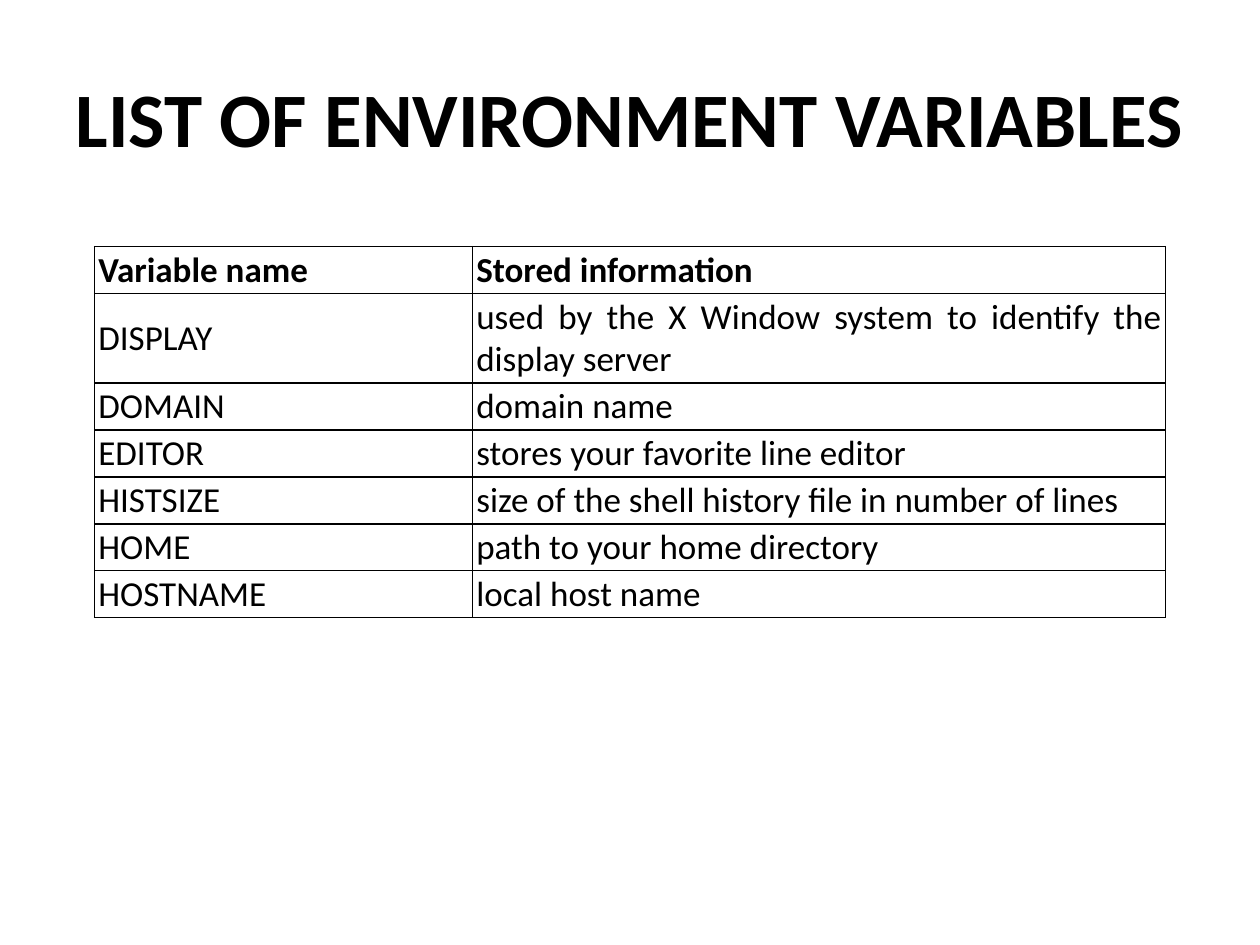
"""Build a slide that lists shell environment variables in a table."""
from lxml.etree import SubElement
from pptx import Presentation
from pptx.dml.color import RGBColor
from pptx.enum.text import MSO_ANCHOR, PP_ALIGN
from pptx.oxml.ns import qn
from pptx.util import Pt

TITLE = "LIST OF ENVIRONMENT VARIABLES"
ROWS = [
    ("Variable name", "Stored information"),
    ("DISPLAY", "used by the X Window system to identify the display server"),
    ("DOMAIN", "domain name"),
    ("EDITOR", "stores your favorite line editor"),
    ("HISTSIZE", "size of the shell history file in number of lines"),
    ("HOME", "path to your home directory"),
    ("HOSTNAME", "local host name"),
]
THEME = {"font": "Calibri", "ink": "000000", "title": 44, "body": 20, "border": 1}
TITLE_BOX = (36, 21.6, 648, 90)
TABLE_ORIGIN = (54, 141)
COLUMN_WIDTHS = (216, 396)
LINE_HEIGHT, ROW_PADDING = 24.4, 2.4
TWO_LINE_ROW = 1
CELL_FORMAT = {
    "margin_left": Pt(2.2), "margin_right": Pt(2.2),
    "margin_top": Pt(1.2), "margin_bottom": Pt(1.2),
    "vertical_anchor": MSO_ANCHOR.MIDDLE,
}
TITLE_FORMAT = {
    "margin_left": 0, "margin_right": 0,
    "vertical_anchor": MSO_ANCHOR.MIDDLE, "word_wrap": True,
}


def apply_format(target, values):
    for name, value in values.items():
        setattr(target, name, value)


def write_text(frame, text, size, bold, alignment):
    paragraph = frame.paragraphs[0]
    paragraph.alignment = alignment
    run = paragraph.add_run()
    run.text = text
    apply_format(run.font, {"name": THEME["font"], "size": Pt(size), "bold": bold})
    run.font.color.rgb = RGBColor.from_string(THEME["ink"])


def add_borders(cell):
    properties = cell._tc.get_or_add_tcPr()
    for side in ("a:lnL", "a:lnR", "a:lnT", "a:lnB"):
        line = SubElement(properties, qn(side), w=str(Pt(THEME["border"])))
        fill = SubElement(line, qn("a:solidFill"))
        SubElement(fill, qn("a:srgbClr"), val=THEME["ink"])


def add_title(slide):
    frame = slide.shapes.add_textbox(*map(Pt, TITLE_BOX)).text_frame
    apply_format(frame, TITLE_FORMAT)
    write_text(frame, TITLE, THEME["title"], True, PP_ALIGN.CENTER)


def add_variable_table(slide):
    heights = [
        LINE_HEIGHT * (2 if index == TWO_LINE_ROW else 1) + ROW_PADDING
        for index in range(len(ROWS))
    ]
    bounds = (*TABLE_ORIGIN, sum(COLUMN_WIDTHS), sum(heights))
    table = slide.shapes.add_table(
        len(ROWS), len(COLUMN_WIDTHS), *map(Pt, bounds)
    ).table
    apply_format(table, {"first_row": False, "horz_banding": False})
    for column, width in zip(table.columns, COLUMN_WIDTHS):
        column.width = Pt(width)
    for row_index, (row, height, texts) in enumerate(zip(table.rows, heights, ROWS)):
        row.height = Pt(height)
        for cell, text in zip(row.cells, texts):
            apply_format(cell, CELL_FORMAT)
            add_borders(cell)
            cell.fill.background()
            write_text(cell.text_frame, text, THEME["body"], row_index == 0, PP_ALIGN.JUSTIFY)


def main():
    presentation = Presentation()
    apply_format(presentation, {"slide_width": Pt(720), "slide_height": Pt(540)})
    slide = presentation.slides.add_slide(presentation.slide_layouts[6])
    add_title(slide)
    add_variable_table(slide)
    presentation.save("out.pptx")


if __name__ == "__main__":
    main()
